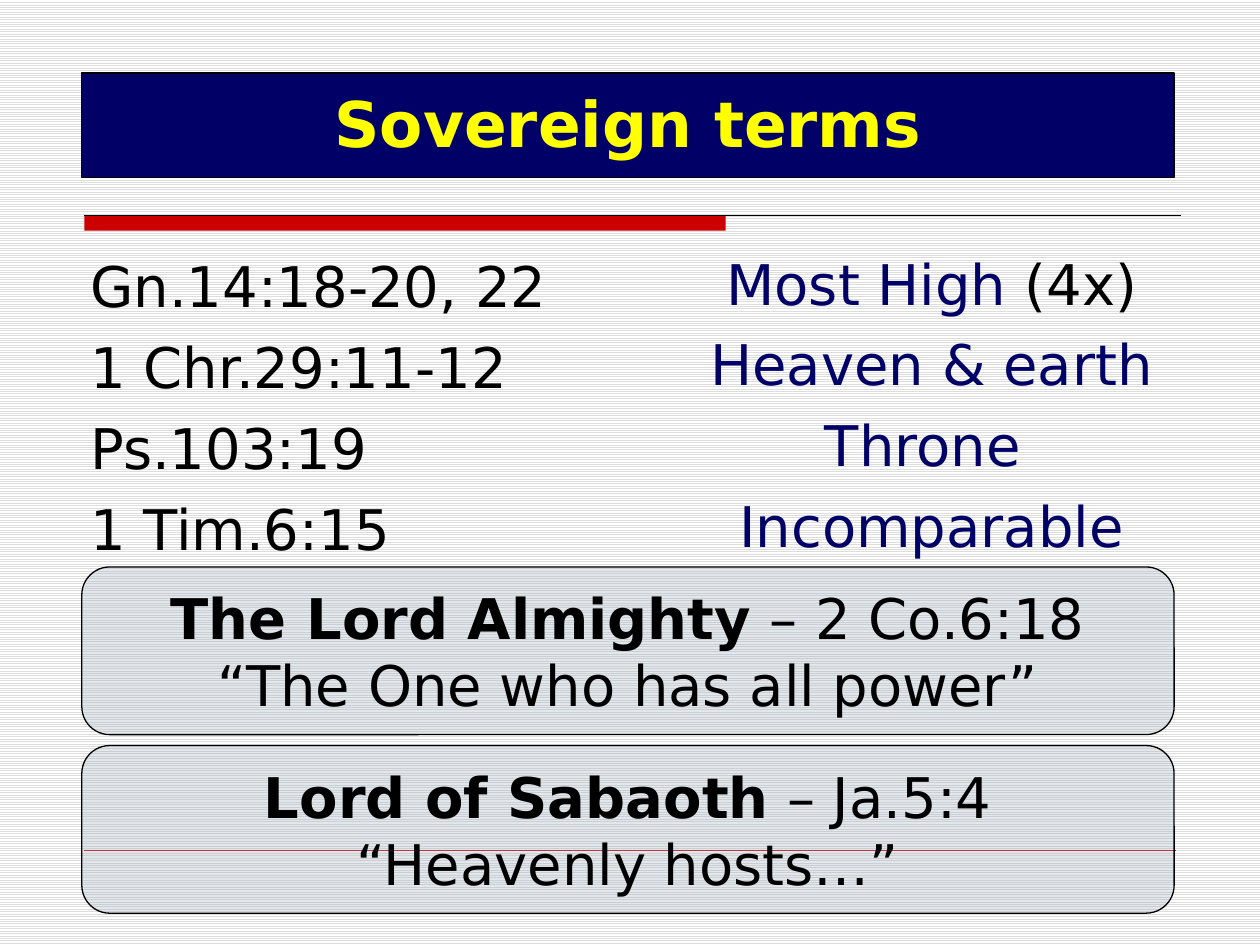
from dataclasses import dataclass

from lxml.etree import SubElement
from pptx import Presentation
from pptx.dml.color import RGBColor
from pptx.enum.dml import MSO_PATTERN
from pptx.enum.shapes import MSO_CONNECTOR, MSO_SHAPE
from pptx.enum.text import MSO_ANCHOR, PP_ALIGN
from pptx.oxml.ns import qn
from pptx.util import Cm, Pt


@dataclass(frozen=True)
class Theme:
    font: str = "DejaVu Sans"
    title_size: int = 36
    text_size: int = 32
    black: str = "000000"
    white: str = "FFFFFF"
    stripe: str = "DDDDDD"
    navy: str = "000066"
    yellow: str = "FFFF00"
    red: str = "CC0000"
    panel: str = "A3B2C1"


def rgb(value):
    return RGBColor.from_string(value)


class Deck:
    def __init__(self, theme):
        self.theme = theme
        self.file = Presentation()
        self.file.slide_width, self.file.slide_height = Cm(25.4), Cm(19.05)
        self.slide = self.file.slides.add_slide(self.file.slide_layouts[6])

    def striped_background(self):
        fill = self.slide.background.fill
        fill.patterned()
        fill.pattern = MSO_PATTERN.LIGHT_HORIZONTAL
        fill.fore_color.rgb = rgb(self.theme.stripe)
        fill.back_color.rgb = rgb(self.theme.white)

    def box(self, kind, left, top, width, height, fill, outline=None, alpha=None):
        box = self.slide.shapes.add_shape(
            kind, Cm(left), Cm(top), Cm(width), Cm(height))
        box.shadow.inherit = False
        box.fill.solid()
        box.fill.fore_color.rgb = rgb(fill)
        if alpha:
            solid = box._element.spPr.find(qn("a:solidFill"))
            color = solid.find(qn("a:srgbClr"))
            SubElement(color, qn("a:alpha"), val=str(alpha * 1000))
        if outline:
            box.line.color.rgb = rgb(outline)
            box.line.width = Pt(0.75)
        else:
            box.line.fill.background()
        return box

    def rule(self, left, right, y, color, width):
        rule = self.slide.shapes.add_connector(
            MSO_CONNECTOR.STRAIGHT, Cm(left), Cm(y), Cm(right), Cm(y))
        rule.line.color.rgb = rgb(color)
        rule.line.width = Pt(width)
        SubElement(rule._element.spPr, qn("a:effectLst"))

    def text_area(self, left, top, width, height):
        return self.slide.shapes.add_textbox(
            Cm(left), Cm(top), Cm(width), Cm(height))

    def add_text(self, holder, paragraphs, align=PP_ALIGN.CENTER,
                 anchor=MSO_ANCHOR.MIDDLE, size=None, gap=0, inset=0.13):
        """Each paragraph is a list of (text, color, bold) runs."""
        frame = holder.text_frame
        frame.word_wrap = True
        frame.vertical_anchor = anchor
        frame.margin_top = frame.margin_bottom = Cm(inset)
        for index, runs in enumerate(paragraphs):
            paragraph = frame.add_paragraph() if index else frame.paragraphs[0]
            paragraph.alignment = align
            paragraph.space_before = Pt(gap if index else 0)
            for text, color, bold in runs:
                run = paragraph.add_run()
                run.text = text
                run.font.name = self.theme.font
                run.font.size = Pt(size or self.theme.text_size)
                run.font.bold = bold
                run.font.color.rgb = rgb(color)


def main():
    theme = Theme()
    deck = Deck(theme)
    left, width = 1.65, 22.02

    # Background and rules
    deck.striped_background()
    deck.box(MSO_SHAPE.RECTANGLE, 1.7, 4.34, 12.93, 0.31, theme.red)
    deck.rule(1.7, 23.8, 4.34, theme.black, 0.5)
    deck.rule(1.7, 23.7, 17.15, theme.red, 0.25)

    # Scripture references
    references = ["Gn.14:18-20, 22", "1 Chr.29:11-12", "Ps.103:19", "1 Tim.6:15"]
    deck.add_text(deck.text_area(1.57, 4.95, 12, 6.4),
                  [[(reference, theme.black, False)] for reference in references],
                  align=PP_ALIGN.LEFT, anchor=MSO_ANCHOR.TOP, gap=7.7)

    # Term beside each reference; the space after Throne keeps it left of centre
    terms = [
        [("Most High ", theme.navy, False), ("(4x)", theme.black, False)],
        [("Heaven & earth", theme.navy, False)],
        [("Throne ", theme.navy, False)],
        [("Incomparable", theme.navy, False)],
    ]
    for row, term in enumerate(terms):
        deck.add_text(deck.text_area(13.92, 5.04 + row * 1.63, 9.73, 1.32),
                      [term], inset=0)

    # Title
    title = deck.box(MSO_SHAPE.RECTANGLE, left, 1.47, width, 2.11,
                     theme.navy, theme.black)
    deck.add_text(title, [[("Sovereign terms", theme.yellow, True)]],
                  anchor=MSO_ANCHOR.TOP, size=theme.title_size, inset=0.23)

    # Divine names
    names = [
        ("The Lord Almighty", " – 2 Co.6:18", "“The One who has all power”"),
        ("Lord of Sabaoth", " – Ja.5:4", "“Heavenly hosts…”"),
    ]
    for row, (name, reference, meaning) in enumerate(names):
        panel = deck.box(MSO_SHAPE.ROUNDED_RECTANGLE, left, 11.43 + row * 3.6,
                         width, 3.38, theme.panel, theme.black, alpha=31)
        deck.add_text(panel, [
            [(name, theme.black, True), (reference, theme.black, False)],
            [(meaning, theme.black, False)],
        ])

    deck.file.save("out.pptx")


if __name__ == "__main__":
    main()
